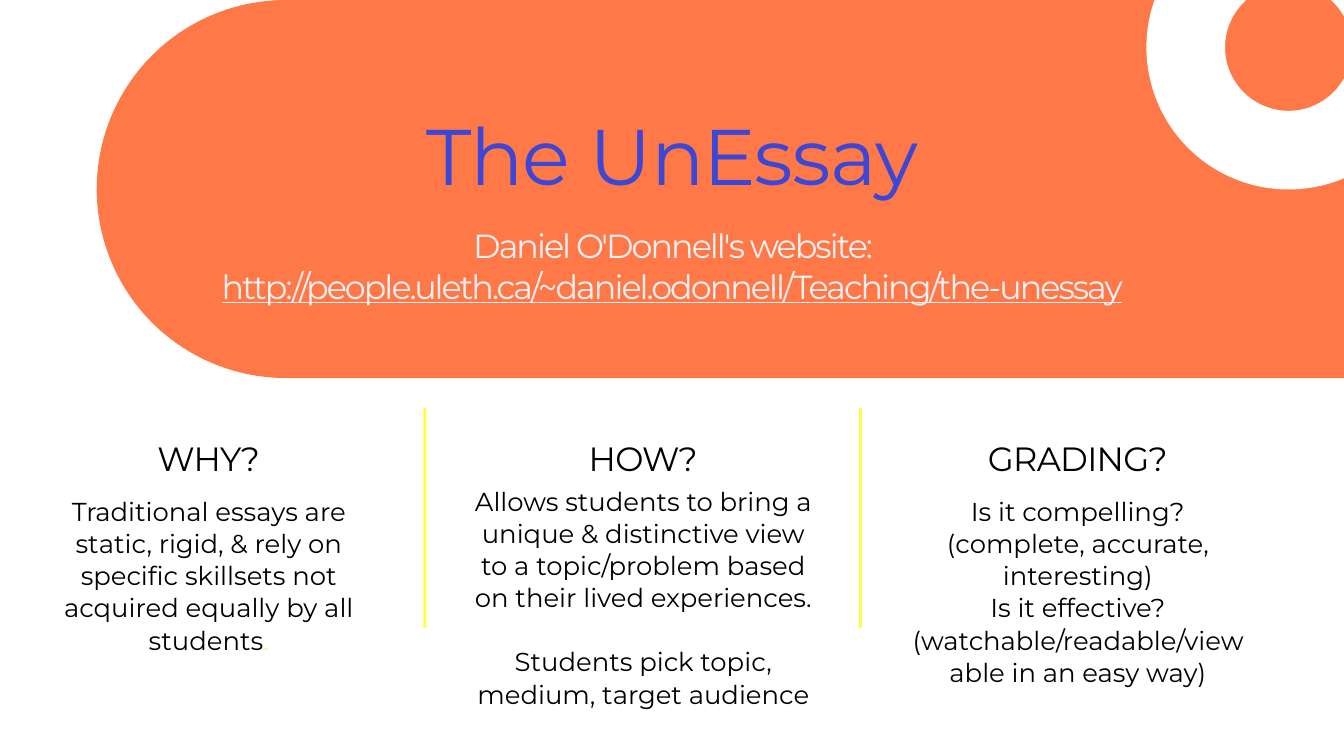
import pptx
import pptx.util
import pptx.dml.color
import pptx.enum.shapes
import pptx.enum.text

Inches = pptx.util.Inches
Pt = pptx.util.Pt
RGBColor = pptx.dml.color.RGBColor
SHAPES = pptx.enum.shapes.MSO_SHAPE

COLORS = {
    "orange": "FF7948",
    "yellow": "FFFD47",
    "blue": "3C47D6",
    "pale": "F2F0F4",
    "black": "000000",
    "white": "FFFFFF",
}

presentation = pptx.Presentation()
presentation.slide_width = Inches(13.33)
presentation.slide_height = Inches(7.5)
slide = presentation.slides.add_slide(presentation.slide_layouts[6])


def add_filled_shape(kind, left, top, width, height, color):
    shape = slide.shapes.add_shape(
        kind, Inches(left), Inches(top), Inches(width), Inches(height)
    )
    shape.shadow.inherit = False
    shape.fill.solid()
    shape.fill.fore_color.rgb = RGBColor.from_string(COLORS[color])
    shape.line.fill.background()
    return shape


def add_text(left, top, width, height, texts, size, line_height, color, tracking=0):
    box = slide.shapes.add_textbox(
        Inches(left), Inches(top), Inches(width), Inches(height)
    )
    frame = box.text_frame
    frame.word_wrap = True
    frame.margin_left = frame.margin_right = 0
    frame.margin_top = frame.margin_bottom = 0
    for index, text in enumerate(texts):
        paragraph = frame.paragraphs[0] if index == 0 else frame.add_paragraph()
        paragraph.add_run().text = text
        paragraph.alignment = pptx.enum.text.PP_ALIGN.CENTER
        paragraph.line_spacing = Pt(line_height)
        paragraph.font.name = "Montserrat"
        paragraph.font.size = Pt(size)
        paragraph.font.color.rgb = RGBColor.from_string(COLORS[color])
        paragraph.font._rPr.set("spc", str(round(tracking * 100)))
    return frame.paragraphs


banner = add_filled_shape(
    SHAPES.ROUND_2_SAME_RECTANGLE, 5.27, -4.31, 3.75, 12.37, "orange"
)
banner.adjustments[0] = 0.5
banner.rotation = 270

add_text(1.72, 1.21, 9.89, 0.79, ["The UnEssay"], 56.3, 56.3, "blue", -0.6)
website = add_text(
    1.72, 2.22, 9.89, 0.79, ["Daniel O'Donnell's website: "], 23.8, 29.3, "pale", -1.4
)
address = website[0].add_run()
address.text = "http://people.uleth.ca/~daniel.odonnell/Teaching/the-unessay"
address.font.underline = True

columns = [
    (0.39, "WHY?", 4.91, 1.27, [
        "Traditional essays are static, rigid, & rely on specific skillsets not "
        "acquired equally by all students",
    ]),
    (4.7, "HOW?", 4.81, 2.24, [
        "Allows students to bring a unique & distinctive view to a topic/problem "
        "based on their lived experiences.",
        "Students pick topic, medium, target audience",
    ]),
    (9.01, "GRADING?", 4.91, 1.91, [
        "Is it compelling?",
        "(complete, accurate, interesting)",
        "Is it effective? (watchable/readable/viewable in an easy way)",
    ]),
]
bodies = {}
for left, heading, top, height, texts in columns:
    bodies[heading] = add_text(left, top, 3.36, height, texts, 18.5, 22.9, "black")
    add_text(left, 4.33, 3.36, 0.4, [heading], 24, 29.9, "black", -0.5)

period = bodies["WHY?"][0].add_run()
period.text = "."
period.font.color.rgb = RGBColor.from_string(COLORS["yellow"])
bodies["HOW?"][1].space_before = Pt(22.9)

for left in (4.2, 8.52):
    add_filled_shape(SHAPES.RECTANGLE, left, 4.05, 0.03, 2.18, "yellow")

ring = add_filled_shape(SHAPES.DONUT, 11.37, -0.94, 2.82, 2.82, "white")
ring.adjustments[0] = 0.78 / 2.82

presentation.save("out.pptx")
